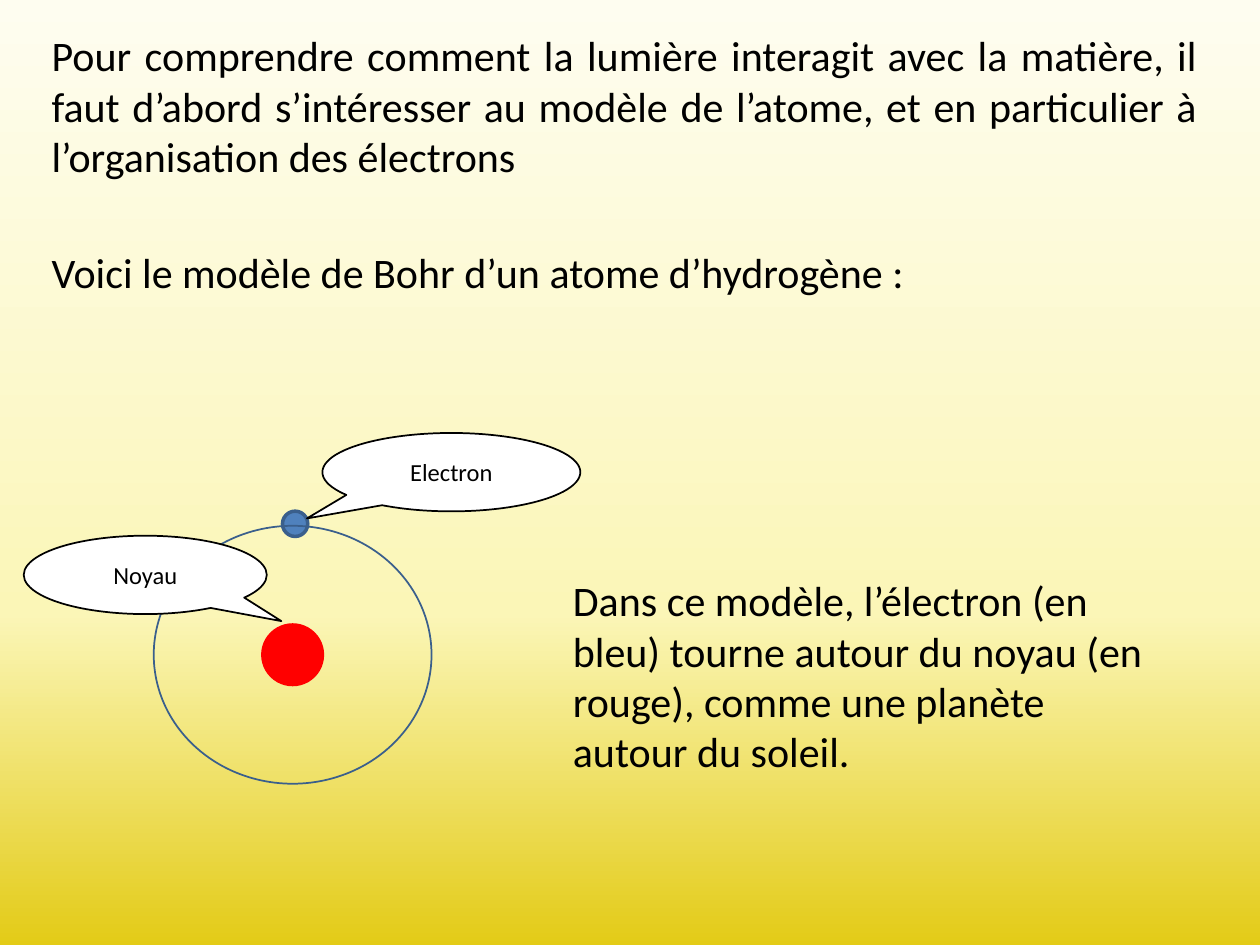
from copy import deepcopy

from pptx import Presentation
from pptx import util as u
from pptx.dml.color import RGBColor
from pptx.enum import shapes, text
from pptx.oxml.ns import qn

BLACK = RGBColor(0x00, 0x00, 0x00)
WHITE = RGBColor(0xFF, 0xFF, 0xFF)
RED = RGBColor(0xFF, 0x00, 0x00)
BLUE = RGBColor(0x4F, 0x81, 0xBD)
DARK_BLUE = RGBColor(0x3A, 0x5F, 0x8C)
CREAM = RGBColor(0xFE, 0xFD, 0xF0)
PALE_YELLOW = RGBColor(0xFB, 0xF6, 0xB7)
GOLD = RGBColor(0xE3, 0xCB, 0x17)


def paint_background(slide, stops):
    """Fill the background with a top-to-bottom gradient of (position, colour) stops."""
    fill = slide.background.fill
    fill.gradient()
    fill.gradient_angle = 270
    stop_list = slide.element.find(".//" + qn("a:gsLst"))
    while len(stop_list) < len(stops):
        stop_list.append(deepcopy(stop_list[0]))
    for stop, (position, color) in zip(fill.gradient_stops, stops):
        stop.position = position
        stop.color.rgb = color


def write(frame, words, size, align):
    """Put one formatted paragraph in a text frame."""
    frame.word_wrap = True
    frame.text = words
    paragraph = frame.paragraphs[0]
    paragraph.alignment = align
    font = paragraph.runs[0].font
    font.name, font.size, font.color.rgb = "Calibri", u.Pt(size), BLACK


def add_statement(slide, box, words, align=text.PP_ALIGN.LEFT):
    """Add a large block of body text."""
    statement = slide.shapes.add_textbox(*map(u.Cm, box))
    write(statement.text_frame, words, 24, align)
    statement.text_frame.auto_size = text.MSO_AUTO_SIZE.SHAPE_TO_FIT_TEXT


def add_figure(slide, kind, box, fill, line, weight):
    """Add an outlined shape, hollow when fill is None."""
    figure = slide.shapes.add_shape(kind, *map(u.Cm, box))
    figure.shadow.inherit = False
    if fill is None:
        figure.fill.background()
    else:
        figure.fill.solid()
        figure.fill.fore_color.rgb = fill
    figure.line.color.rgb = line
    figure.line.width = u.Pt(weight)
    return figure


def add_circle(slide, center, width, height, fill, line, weight):
    """Add an ellipse around a center point."""
    x, y = center
    box = (x - width / 2, y - height / 2, width, height)
    add_figure(slide, shapes.MSO_SHAPE.OVAL, box, fill, line, weight)


def add_callout(slide, box, label, tail_x):
    """Add a labelled oval callout whose tail points down to one side."""
    callout = add_figure(slide, shapes.MSO_SHAPE.OVAL_CALLOUT, box, WHITE, BLACK, 1)
    callout.adjustments[0] = tail_x
    callout.adjustments[1] = 0.59
    write(callout.text_frame, label, 14, text.PP_ALIGN.CENTER)
    callout.text_frame.vertical_anchor = text.MSO_ANCHOR.MIDDLE


def main():
    """Build the slide on the Bohr model of hydrogen."""
    deck = Presentation()
    deck.slide_width, deck.slide_height = u.Cm(25.4), u.Cm(19.05)
    slide = deck.slides.add_slide(deck.slide_layouts[6])
    paint_background(slide, [(0, CREAM), (0.65, PALE_YELLOW), (1, GOLD)])

    add_statement(
        slide, (0.79, 0.48, 23.6, 3.33),
        "Pour comprendre comment la lumière interagit avec la matière, il faut "
        "d’abord s’intéresser au modèle de l’atome, et en particulier à "
        "l’organisation des électrons",
        text.PP_ALIGN.JUSTIFY)
    add_statement(slide, (0.79, 4.85, 23.01, 1.27),
                  "Voici le modèle de Bohr d’un atome d’hydrogène :")

    nucleus = (5.9, 13.2)
    electron = (5.95, 10.56)
    add_circle(slide, electron, 0.51, 0.51, BLUE, DARK_BLUE, 2)
    add_circle(slide, nucleus, 1.2, 1.2, RED, RED, 2)
    add_statement(
        slide, (11.3, 11.46, 12.19, 4.37),
        "Dans ce modèle, l’électron (en bleu) tourne autour du noyau (en rouge), "
        "comme une planète autour du soleil.")
    add_circle(slide, nucleus, 5.6, 5.2, None, DARK_BLUE, 1)

    add_callout(slide, (6.5, 8.73, 5.2, 1.58), "Electron", -0.56)
    add_callout(slide, (0.48, 10.8, 4.9, 1.58), "Noyau", 0.56)
    deck.save("out.pptx")


if __name__ == "__main__":
    main()
